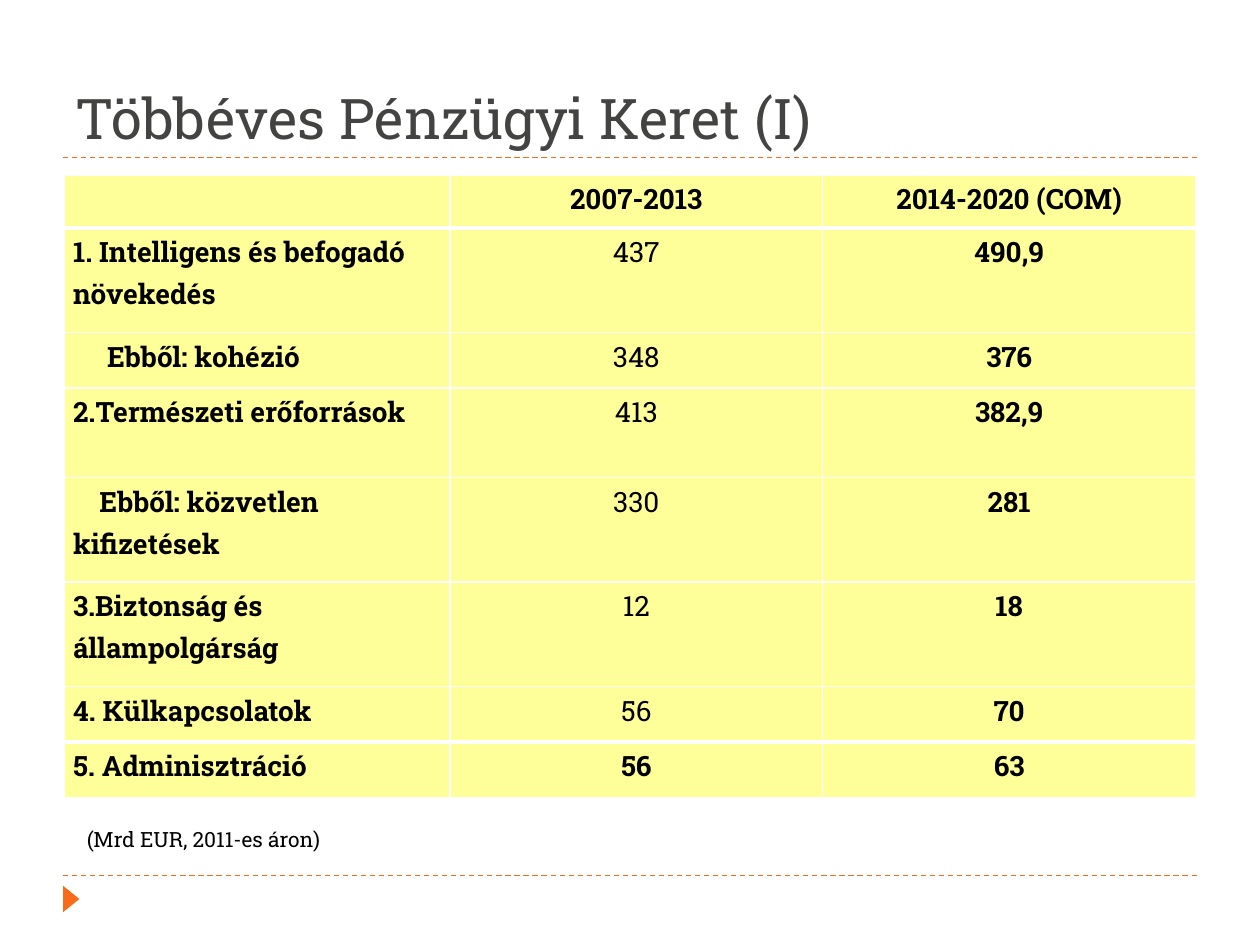
from lxml import etree
from pptx import Presentation
from pptx.dml.color import RGBColor
from pptx.enum.dml import MSO_LINE
from pptx.enum.shapes import MSO_CONNECTOR, MSO_SHAPE
from pptx.enum.text import MSO_ANCHOR, MSO_AUTO_SIZE, PP_ALIGN
from pptx.oxml.ns import qn
from pptx.util import Inches, Pt

LEFT, CENTER, JUSTIFY = PP_ALIGN.LEFT, PP_ALIGN.CENTER, PP_ALIGN.JUSTIFY
FONT = "Roboto Slab"
COLORS = {"accent": "F96A1B", "title": "434342", "text": "000000",
          "cell": "FFFF99", "border": "FFFFFF"}

# Content
TITLE = "Többéves Pénzügyi Keret (I)"
NOTE = "(Mrd EUR, 2011-es áron)"
HEADER = ("", "2007-2013", "2014-2020 (COM)")
BUDGET = [  # heading, 2007-2013, 2014-2020
    ("1. Intelligens és befogadó növekedés", "437", "490,9"),
    ("Ebből: kohézió", "348", "376"),
    ("2.Természeti erőforrások", "413", "382,9"),
    ("Ebből: közvetlen kifizetések", "330", "281"),
    ("3.Biztonság és állampolgárság", "12", "18"),
    ("4. Külkapcsolatok", "56", "70"),
    ("5. Adminisztráció", "56", "63"),
]
FIRST_LINE_INDENTS = {2: 0.27, 4: 0.21}
COLUMN_WIDTHS = (3.06, 2.96, 2.96)
ROW_HEIGHTS = (0.42, 0.83, 0.44, 0.71, 0.83, 0.83, 0.44, 0.44)
RULE_HEIGHTS = (6.95, 1.25)


def rgb(name):
    return RGBColor.from_string(COLORS[name])


def write(frame, text, size, color="text", bold=False, align=LEFT):
    paragraph = frame.paragraphs[0]
    paragraph.alignment = align
    run = paragraph.add_run()
    run.text = text
    run.font.color.rgb = rgb(color)
    for key, value in {"name": FONT, "size": Pt(size), "bold": bold}.items():
        setattr(run.font, key, value)
    return paragraph


def add_borders(cell, top, bottom):
    properties = cell._tc.get_or_add_tcPr()
    for side, width in {"L": 1, "R": 1, "T": top, "B": bottom}.items():
        line = etree.SubElement(properties, qn(f"a:ln{side}"), w=str(Pt(width)))
        fill = etree.SubElement(line, qn("a:solidFill"))
        etree.SubElement(fill, qn("a:srgbClr"), val=COLORS["border"])


def add_rule(slide, y):
    rule = slide.shapes.add_connector(
        MSO_CONNECTOR.STRAIGHT, Inches(0.5), Inches(y), Inches(9.5), Inches(y))
    rule.line.color.rgb = rgb("accent")
    rule.line.width = Pt(0.75)
    rule.line.dash_style = MSO_LINE.DASH
    etree.SubElement(rule._element.spPr, qn("a:effectLst"))


def add_budget_table(slide):
    rows = [HEADER] + BUDGET
    last = len(rows) - 1
    table = slide.shapes.add_table(
        len(rows), len(HEADER), Inches(0.51), Inches(1.39),
        Inches(sum(COLUMN_WIDTHS)), Inches(sum(ROW_HEIGHTS))).table
    for column, width in zip(table.columns, COLUMN_WIDTHS):
        column.width = Inches(width)
    for row, height in zip(table.rows, ROW_HEIGHTS):
        row.height = Inches(height)

    insets = {"margin_left": Inches(0.07), "margin_right": Inches(0.07),
              "margin_top": 0, "margin_bottom": 0}
    for r, values in enumerate(rows):
        for c, text in enumerate(values):
            cell = table.cell(r, c)
            for key, value in insets.items():
                setattr(cell, key, value)
            # Thick rules under the header and above the last row
            add_borders(cell, top=3 if r in (1, last) else 1,
                        bottom=3 if r in (0, last - 1) else 1)
            cell.fill.solid()
            cell.fill.fore_color.rgb = rgb("cell")
            if not text:
                continue
            one_line = ROW_HEIGHTS[r] < 0.8
            align = CENTER if c else JUSTIFY if one_line else LEFT
            bold = c != 1 or r in (0, last)
            paragraph = write(cell.text_frame, text, 16, bold=bold, align=align)
            paragraph.line_spacing = 1.15
            if c == 0 and r in FIRST_LINE_INDENTS:
                indent = Inches(FIRST_LINE_INDENTS[r])
                paragraph._p.get_or_add_pPr().set("indent", str(indent))


def main():
    deck = Presentation()
    deck.slide_width, deck.slide_height = Inches(10), Inches(7.5)
    slide = deck.slides.add_slide(deck.slide_layouts[5])

    # Dashed rules and footer marker
    for y in RULE_HEIGHTS:
        add_rule(slide, y)
    marker = slide.shapes.add_shape(
        MSO_SHAPE.ISOSCELES_TRIANGLE,
        Inches(0.46), Inches(7.07), Inches(0.21), Inches(0.13))
    marker.rotation = 90
    marker.shadow.inherit = False
    marker.fill.solid()
    marker.fill.fore_color.rgb = rgb("accent")
    marker.line.fill.background()

    # Title
    title = slide.shapes.title
    title_box = {"left": 0.5, "top": 0.17, "width": 9, "height": 1.08}
    for key, value in title_box.items():
        setattr(title, key, Inches(value))
    title.text_frame.auto_size = MSO_AUTO_SIZE.NONE
    title.text_frame.vertical_anchor = MSO_ANCHOR.BOTTOM
    write(title.text_frame, TITLE, 32, "title")

    add_budget_table(slide)

    # Unit note
    note = slide.shapes.add_textbox(
        Inches(0.59), Inches(6.51), Inches(4.09), Inches(0.3))
    note.text_frame.word_wrap = True
    note.text_frame.auto_size = MSO_AUTO_SIZE.SHAPE_TO_FIT_TEXT
    write(note.text_frame, NOTE, 12)

    deck.save("out.pptx")


if __name__ == "__main__":
    main()
